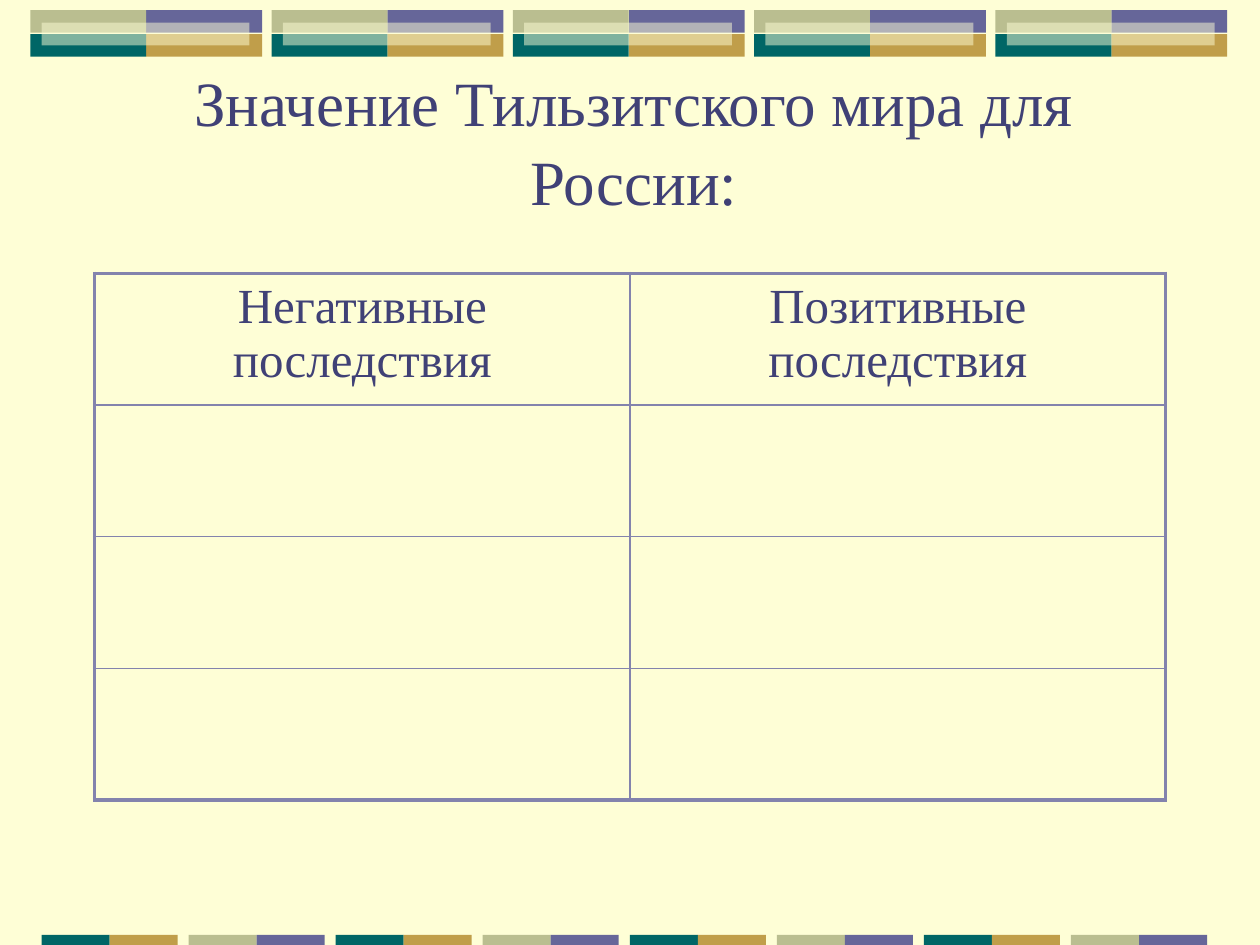
import pptx
import pptx.dml.color
import pptx.enum.shapes
import pptx.enum.text
import pptx.oxml.ns
import pptx.oxml.xmlchemy
import pptx.util
from pptx.util import Inches

CREAM = "FEFED6"
TEAL = "006666"
GOLD = "C09E4A"
OLIVE = "BABE90"
VIOLET = "666699"
TEXT = "404176"
BORDER = "8383AD"


def colour(value):
    """Turn a hex string into a colour."""
    return pptx.dml.color.RGBColor.from_string(value)


def element(tag, **attributes):
    """Make an XML element with the given attributes."""
    node = pptx.oxml.xmlchemy.OxmlElement(tag)
    for name, value in attributes.items():
        node.set(name, str(value))
    return node


def write(frame, text, size, font="Times New Roman", ink=TEXT):
    """Write one centred paragraph into a text frame."""
    frame.word_wrap = True
    para = frame.paragraphs[0]
    para.alignment = pptx.enum.text.PP_ALIGN.CENTER
    span = para.add_run()
    span.text = text
    span.font.name = font
    span.font.size = pptx.util.Pt(size)
    span.font.color.rgb = colour(ink)


def add_block(page, left, top, width, height, fill, opacity=100):
    """Add a plain rectangle without an outline."""
    block = page.shapes.add_shape(
        pptx.enum.shapes.MSO_SHAPE.RECTANGLE,
        Inches(left), Inches(top), Inches(width), Inches(height))
    block.shadow.inherit = False
    block.line.fill.background()
    block.fill.solid()
    block.fill.fore_color.rgb = colour(fill)
    if opacity < 100:
        shade = block._element.spPr.find(".//" + pptx.oxml.ns.qn("a:srgbClr"))
        shade.append(element("a:alpha", val=opacity * 1000))


def add_top_band(page, count=5):
    """Add the row of four-colour tiles along the top edge."""
    width, height = 0.92, 0.18
    for index in range(count):
        left = 0.24 + 7.66 * index / (count - 1)
        middle = left + width
        add_block(page, middle, 0.08, width, height, VIOLET)
        add_block(page, middle, 0.27, width, height, GOLD)
        add_block(page, left, 0.27, width, height, TEAL)
        add_block(page, left, 0.08, width, height, OLIVE)
        add_block(page, left + 0.09, 0.18, 1.65, height, CREAM, opacity=50)


def add_bottom_band(page, count=8):
    """Add the row of alternating two-colour bars along the bottom edge."""
    pairs = [(TEAL, GOLD), (OLIVE, VIOLET)]
    for index in range(count):
        left = 0.33 + 8.17 * index / (count - 1)
        for half, fill in enumerate(pairs[index % 2]):
            add_block(page, left + 0.54 * half, 7.42, 0.54, 0.08, fill)


def add_title(page, text):
    """Add the slide title."""
    box = page.shapes.add_textbox(
        Inches(0.78), Inches(0.78), Inches(8.5), Inches(1.25))
    frame = box.text_frame
    frame.vertical_anchor = pptx.enum.text.MSO_ANCHOR.MIDDLE
    frame.margin_bottom = Inches(0.65)
    write(frame, text, size=36)
    frame.paragraphs[0].line_spacing = 1.04


def set_border(cell, side, points):
    """Draw one solid border of a table cell."""
    line = element("a:ln" + side, w=int(pptx.util.Pt(points)))
    fill = element("a:solidFill")
    fill.append(element("a:srgbClr", val=BORDER))
    line.append(fill)
    cell._tc.get_or_add_tcPr().append(line)


def add_table(page, headings, rows):
    """Add a table with headings, empty rows and a thick outer frame."""
    columns = len(headings)
    frame = page.shapes.add_table(
        rows, columns, Inches(0.75), Inches(2.17), Inches(8.5), Inches(4.18))
    table = frame.table
    table.first_row = False
    table.horz_banding = False
    for row in range(rows):
        for column in range(columns):
            cell = table.cell(row, column)
            outer = {"L": column == 0, "R": column == columns - 1,
                     "T": row == 0, "B": row == rows - 1}
            for side, is_outer in outer.items():
                set_border(cell, side, 2.25 if is_outer else 1)
            cell.fill.background()
    for column, heading in enumerate(headings):
        write(table.cell(0, column).text_frame, heading, size=28)


def main():
    """Build the slide and save it."""
    deck = pptx.Presentation()
    deck.slide_width = Inches(10)
    deck.slide_height = Inches(7.5)
    page = deck.slides.add_slide(deck.slide_layouts[6])
    page.background.fill.solid()
    page.background.fill.fore_color.rgb = colour(CREAM)
    add_top_band(page)
    add_bottom_band(page)
    add_title(page, "Значение Тильзитского мира для России:")
    add_table(page, ["Негативные последствия", "Позитивные последствия"], rows=4)
    deck.save("out.pptx")


if __name__ == "__main__":
    main()
